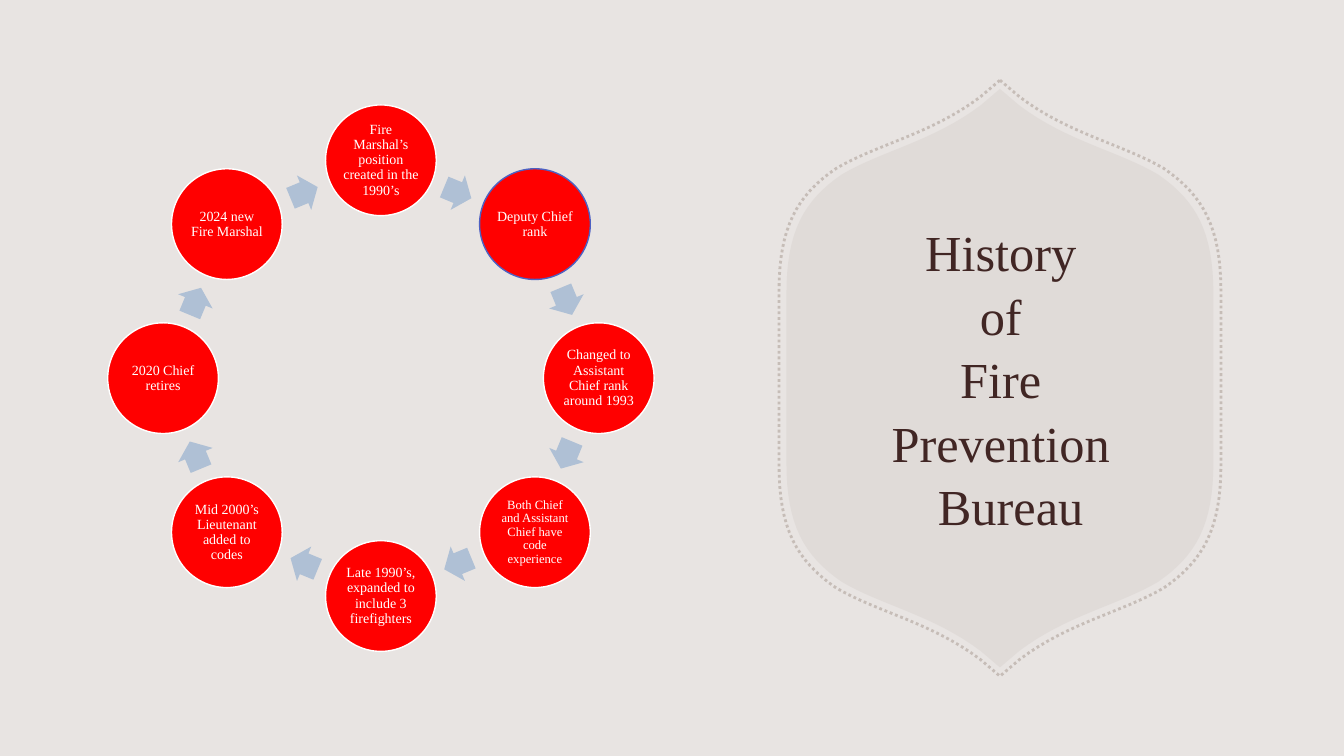
"""Build the slide on the history of the Fire Prevention Bureau."""
import math
from dataclasses import dataclass

import lxml.etree
import pptx
import pptx.dml.color
import pptx.enum.dml
import pptx.enum.shapes
import pptx.enum.text
import pptx.oxml.ns
import pptx.util

Cm = pptx.util.Cm
Pt = pptx.util.Pt
Shapes = pptx.enum.shapes.MSO_SHAPE
Point = tuple[float, float]

COLOURS = {
    "background": "E8E4E2",
    "badge": "B5A9A2",
    "title": "412624",
    "circle": "FF0000",
    "white": "FFFFFF",
    "highlight": "4D61C3",
    "arrow": "AFC0D5",
}
FONT = "Times New Roman"
RING_CENTRE = (9.6, 9.53)
CIRCLE_ORBIT, ARROW_ORBIT = 5.49, 5.06
CIRCLE_SIZE = 2.79
ARROW_WIDTH, ARROW_HEIGHT = 0.74, 0.94
BADGE_CENTRE = (25.2, 9.53)
BADGE_TIP = [(0, -7.29), (0.48, -6.88)]
BADGE_CURVES = [
    [(0.48, -6.88), (1.68, -5.97), (3, -5.72), (3.99, -5.13)],
    [(3.99, -5.13), (4.95, -4.47), (5.38, -3.68), (5.38, -2.13)],
]
CURVE_STEPS = 16


@dataclass
class Milestone:
    """One circle of the ring."""
    text: str
    size: float = 10
    outline: str = "white"


MILESTONES = [
    Milestone("Fire Marshal’s position created in the 1990’s"),
    Milestone("Deputy Chief rank", outline="highlight"),
    Milestone("Changed to Assistant Chief rank around 1993"),
    Milestone("Both Chief and Assistant Chief have code experience", size=9),
    Milestone("Late 1990’s, expanded to include 3 firefighters"),
    Milestone("Mid 2000’s Lieutenant added to codes"),
    Milestone("2020 Chief retires"),
    Milestone("2024 new Fire Marshal"),
]


def colour(name: str) -> pptx.dml.color.RGBColor:
    """Return a named colour."""
    return pptx.dml.color.RGBColor.from_string(COLOURS[name])


def write(para, text: str, *, size: float, ink: str, spacing: float) -> None:
    """Put formatted, centred text into a paragraph."""
    para.text = text
    para.alignment = pptx.enum.text.PP_ALIGN.CENTER
    para.line_spacing = spacing
    for span in [para.font, *(run.font for run in para.runs)]:
        span.name, span.size = FONT, Pt(size)
        span.color.rgb = colour(ink)


def set_opacity(shape, percent: int) -> None:
    """Make the colour of a shape partly transparent."""
    for tint in shape.element.spPr.iter(pptx.oxml.ns.qn("a:srgbClr")):
        alpha = lxml.etree.SubElement(tint, pptx.oxml.ns.qn("a:alpha"))
        alpha.set("val", str(percent * 1000))


def on_ring(orbit: float, degrees: float) -> Point:
    """Return the point at a clockwise angle from the top of the ring."""
    angle = math.radians(degrees)
    return (RING_CENTRE[0] + orbit * math.sin(angle),
            RING_CENTRE[1] - orbit * math.cos(angle))


def add_centred(page, kind, centre: Point, width: float, height: float, fill: str):
    """Add a filled preset shape around a centre point."""
    shape = page.shapes.add_shape(
        kind, Cm(centre[0] - width / 2), Cm(centre[1] - height / 2), Cm(width), Cm(height))
    shape.shadow.inherit = False
    shape.fill.solid()
    shape.fill.fore_color.rgb = colour(fill)
    shape.line.fill.background()
    return shape


def add_circle(page, milestone: Milestone, degrees: float) -> None:
    """Add a milestone circle with its text."""
    circle = add_centred(page, Shapes.OVAL, on_ring(CIRCLE_ORBIT, degrees),
                         CIRCLE_SIZE, CIRCLE_SIZE, "circle")
    circle.line.color.rgb = colour(milestone.outline)
    circle.line.width = Pt(1)
    box = circle.text_frame
    box.word_wrap = True
    box.vertical_anchor = pptx.enum.text.MSO_ANCHOR.MIDDLE
    box.margin_left = box.margin_right = box.margin_top = box.margin_bottom = Cm(0.03)
    write(box.paragraphs[0], milestone.text, size=milestone.size, ink="white", spacing=0.9)


def add_arrow(page, degrees: float) -> None:
    """Add an arrow that points clockwise along the ring."""
    arrow = add_centred(page, Shapes.RIGHT_ARROW, on_ring(ARROW_ORBIT, degrees),
                        ARROW_WIDTH, ARROW_HEIGHT, "arrow")
    arrow.adjustments[0], arrow.adjustments[1] = 0.6, 0.5
    arrow.rotation = degrees


def curve_points(controls: list[Point]) -> list[Point]:
    """Return points along a cubic curve, without its start."""
    points = []
    for step in range(1, CURVE_STEPS + 1):
        t = step / CURVE_STEPS
        weights = [math.comb(3, k) * t**k * (1 - t)**(3 - k) for k in range(4)]
        points.append(tuple(sum(w * c[axis] for w, c in zip(weights, controls))
                            for axis in (0, 1)))
    return points


def add_badge(page, scale_x: float = 1, scale_y: float = 1):
    """Add the badge outline by mirroring its upper right quarter."""
    quarter = BADGE_TIP + [point for curve in BADGE_CURVES for point in curve_points(curve)]
    right = quarter + [(x, -y) for x, y in reversed(quarter)]
    points = [(Cm(BADGE_CENTRE[0] + x * scale_x), Cm(BADGE_CENTRE[1] + y * scale_y))
              for x, y in right + [(-x, y) for x, y in reversed(right)]]
    builder = page.shapes.build_freeform(*points[0])
    builder.add_line_segments(points[1:], close=True)
    badge = builder.convert_to_shape()
    badge.shadow.inherit = False
    return badge


def add_badges(page) -> None:
    """Add the filled badge and its dotted border."""
    panel = add_badge(page)
    panel.fill.solid()
    panel.fill.fore_color.rgb = colour("badge")
    panel.line.fill.background()
    set_opacity(panel, 15)
    border = add_badge(page, 1.035, 1.03)
    border.fill.background()
    border.line.color.rgb = colour("badge")
    border.line.width = Pt(2)
    border.line.dash_style = pptx.enum.dml.MSO_LINE.ROUND_DOT
    set_opacity(border, 65)


def add_title(page) -> None:
    """Fill the title placeholder and bring it in front of the badge."""
    title = page.shapes.title
    title.left, title.top, title.width, title.height = Cm(20.8), Cm(5.36), Cm(8.84), Cm(8.28)
    box = title.text_frame
    box.word_wrap = True
    box.auto_size = pptx.enum.text.MSO_AUTO_SIZE.NONE
    box.vertical_anchor = pptx.enum.text.MSO_ANCHOR.MIDDLE
    write(box.paragraphs[0], "History\vof\vFire\vPrevention", size=36, ink="title", spacing=1.05)
    last = box.add_paragraph()
    write(last, "Bureau", size=36, ink="title", spacing=1.05)
    last.space_before = Pt(0)
    last._p.get_or_add_pPr().set("marL", str(Cm(0.5)))
    title.element.getparent().append(title.element)


def main() -> None:
    """Build and save the deck."""
    deck = pptx.Presentation()
    deck.slide_width, deck.slide_height = Cm(33.87), Cm(19.05)
    page = deck.slides.add_slide(deck.slide_layouts[5])
    page.background.fill.solid()
    page.background.fill.fore_color.rgb = colour("background")
    add_badges(page)
    add_title(page)
    step = 360 / len(MILESTONES)
    for index, milestone in enumerate(MILESTONES):
        add_circle(page, milestone, index * step)
        add_arrow(page, (index + 0.5) * step)
    deck.save("out.pptx")


if __name__ == "__main__":
    main()
